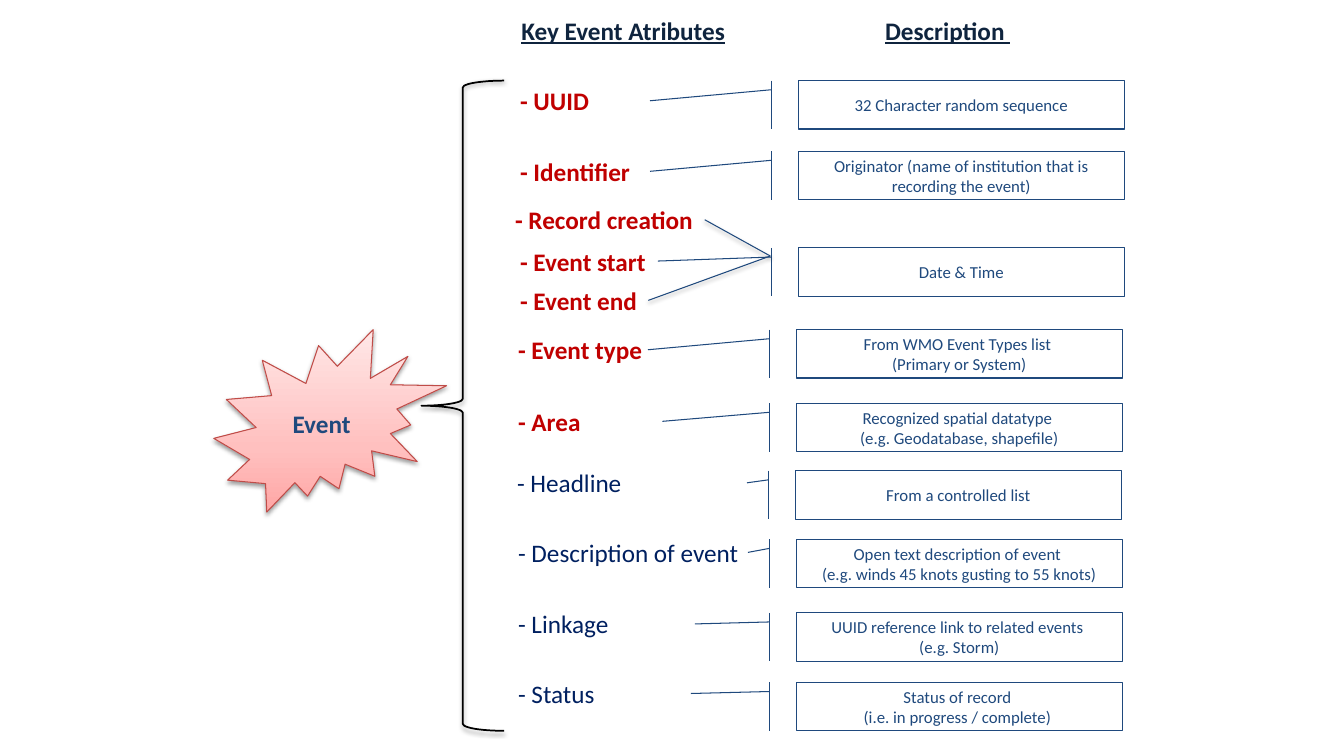
from copy import deepcopy
from lxml.etree import SubElement
from pptx import Presentation
from pptx.dml.color import RGBColor
from pptx.enum.shapes import MSO_CONNECTOR, MSO_SHAPE
from pptx.enum.text import MSO_ANCHOR, MSO_AUTO_SIZE, PP_ALIGN
from pptx.oxml.ns import qn
from pptx.util import Inches, Pt

RED = RGBColor(0xC0, 0x00, 0x00)
NAVY = RGBColor(0x00, 0x20, 0x60)
BLUE = RGBColor(0x1F, 0x49, 0x7D)
INK = RGBColor(0x0F, 0x24, 0x3E)
BLACK = RGBColor(0x00, 0x00, 0x00)
ROSE = RGBColor(0xBF, 0x4C, 0x48)
PINKS = [(0, RGBColor(0xFF, 0xA6, 0xA5)),
         (0.35, RGBColor(0xFF, 0xC0, 0xBF)),
         (1, RGBColor(0xFF, 0xE7, 0xE7))]

BOX_GAP = 2.86  # from the left of a label to the left of its box
BOX_W, BOX_H = 3.23, 0.48
LABEL_H = 0.4

# Label, description, left, label top, box top, label width, reach of leader, colour
ROWS = [
    ("UUID", "32 Character random sequence", 5.06, 0.8, 0.8, 0.89, 0.456, RED),
    ("Identifier", "Originator (name of institution that is recording the event)",
     5.06, 1.5, 1.5, 1.3, 0.456, RED),
    ("Event start", "Date & Time", 5.06, 2.39, 2.46, 1.46, 0.432, RED),
    ("Event type", "From WMO Event Types list \n(Primary or System)",
     5.04, 3.27, 3.27, 1.44, 0.456, RED),
    ("Area", "Recognized spatial datatype \n(e.g. Geodatabase, shapefile)",
     5.04, 3.98, 4, 0.83, 0.412, RED),
    ("Headline", "From a controlled list", 5.03, 4.59, 4.67, 1.25, 0.149, NAVY),
    ("Description of event",
     "Open text description of event \n(e.g. winds 45 knots gusting to 55 knots)",
     5.04, 5.28, 5.35, 2.41, 0.149, NAVY),
    ("Linkage", "UUID reference link to related events \n(e.g. Storm)",
     5.04, 5.99, 6.08, 1.17, 0.312, NAVY),
    ("Status", "Status of record \n(i.e. in progress / complete) ",
     5.04, 6.68, 6.77, 0.97, 0.324, NAVY),
]
# Further labels that share the date box: label, left, top, width
DATES = [("Record creation", 5.01, 1.98, 1.98), ("Event end", 5.06, 2.78, 1.37)]
DATE_TIP = (7.64, 2.54)


def write(shape, text, align, anchor, **font):
    frame = shape.text_frame
    frame.vertical_anchor = anchor
    para = frame.paragraphs[0]
    para.text = text
    para.alignment = align
    for run in para.runs:
        run.font.name = "Calibri"
        run.font.color.rgb = font["color"]
        for key in font.keys() - {"color"}:
            setattr(run.font, key, font[key])


def outline(shape, color, width):
    shape.line.color.rgb = color
    shape.line.width = Pt(width)


def shade(shape):
    props = shape._element.spPr
    for old in props.findall(qn("a:effectLst")):
        props.remove(old)
    effects = SubElement(props, qn("a:effectLst"))
    shadow = SubElement(effects, qn("a:outerShdw"), blurRad=str(Pt(3.1)),
                        dist=str(Pt(1.6)), dir="5400000", rotWithShape="0")
    color = SubElement(shadow, qn("a:srgbClr"), val="000000")
    SubElement(color, qn("a:alpha"), val="38000")


def place(shape, *box):
    for name, size in zip(("left", "top", "width", "height"), box):
        setattr(shape, name, Inches(size))


def label(shape, text, box, **font):
    place(shape, *box)
    frame = shape.text_frame
    frame.word_wrap = False
    frame.auto_size = MSO_AUTO_SIZE.SHAPE_TO_FIT_TEXT
    write(shape, text, PP_ALIGN.LEFT, MSO_ANCHOR.TOP, size=Pt(18), **font)
    return shape


def text_box(slide):
    return slide.shapes.add_textbox(0, 0, 0, 0)


def preset(slide, kind, box):
    shape = slide.shapes.add_shape(kind, *map(Inches, box))
    shape.shadow.inherit = False
    return shape


def heads(slide):
    font = dict(color=INK, bold=True, underline=True)
    label(slide.shapes.title, "Key Event Atributes", (5.07, 0.1, 2.3, LABEL_H), **font)
    label(text_box(slide), "Description ", (8.68, 0.1, 1.45, LABEL_H), **font)


def brace(slide, box):
    shape = preset(slide, MSO_SHAPE.LEFT_BRACE, box)
    shape.fill.background()
    outline(shape, BLACK, 1.25)
    shade(shape)


def burst(slide, box):
    shape = preset(slide, MSO_SHAPE.EXPLOSION2, box)
    fill = shape.fill
    fill.gradient()
    fill.gradient_angle = 90
    stops = shape._element.spPr.find(qn("a:gradFill")).find(qn("a:gsLst"))
    stops.append(deepcopy(stops[-1]))
    for stop, (pos, color) in zip(fill.gradient_stops, PINKS):
        stop.position = pos
        stop.color.rgb = color
    outline(shape, ROSE, 0.75)
    shade(shape)
    write(shape, "Event", PP_ALIGN.CENTER, MSO_ANCHOR.MIDDLE,
          size=Pt(18), color=BLUE, bold=True)


def row(slide, name, text, left, top, box_top, width, reach, color):
    label(text_box(slide), "- " + name, (left, top, width, LABEL_H),
          color=color, bold=color == RED)
    # The leader of the box ends level with the middle of the label
    box = preset(slide, MSO_SHAPE.LINE_CALLOUT_1_BORDER_AND_ACCENT_BAR,
                 (left + BOX_GAP, box_top, BOX_W, BOX_H))
    tip = (top + LABEL_H / 2 - box_top) / BOX_H
    for i, value in enumerate((0.188, -0.083, tip, -reach)):
        box.adjustments[i] = value
    box.fill.background()
    outline(box, BLUE, 0.75)
    write(box, text, PP_ALIGN.CENTER, MSO_ANCHOR.MIDDLE, size=Pt(12), color=BLUE)


def date(slide, name, left, top, width):
    box = label(text_box(slide), "- " + name, (left, top, width, LABEL_H),
                color=RED, bold=True)
    end = [Inches(n) for n in DATE_TIP]
    line = slide.shapes.add_connector(MSO_CONNECTOR.STRAIGHT, *end, *end)
    line.begin_connect(box, 3)
    outline(line, BLUE, 0.75)
    shade(line)


def main():
    deck = Presentation()
    deck.slide_width, deck.slide_height = Inches(13.33), Inches(7.5)
    slide = deck.slides.add_slide(deck.slide_layouts[5])
    heads(slide)
    brace(slide, (4.18, 0.8, 0.82, 6.45))
    for item in ROWS:
        row(slide, *item)
    for item in DATES:
        date(slide, *item)
    burst(slide, (2.12, 3.27, 2.31, 1.81))
    deck.save("out.pptx")


if __name__ == "__main__":
    main()
